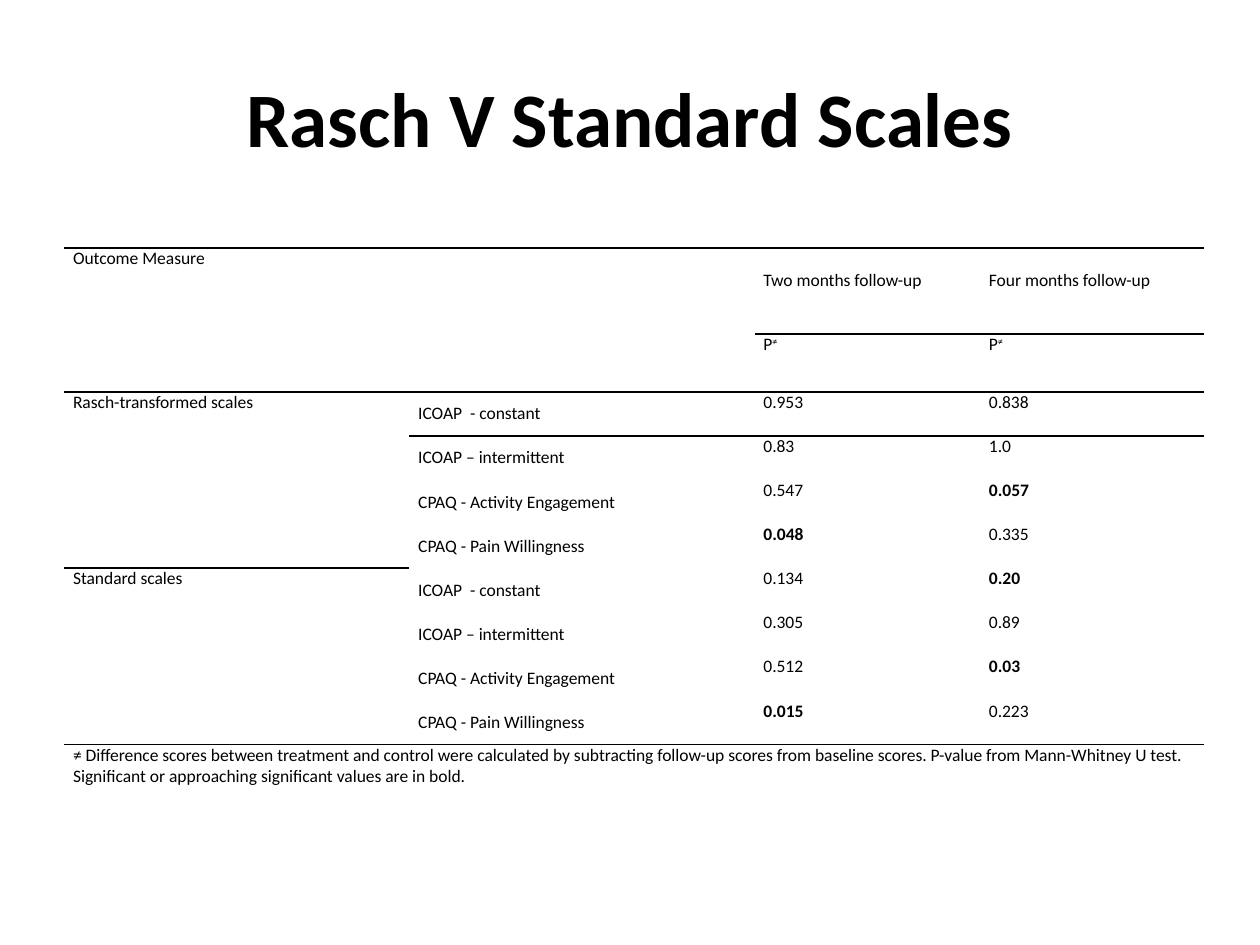
from lxml import etree
from pptx import Presentation
from pptx.dml.color import RGBColor as RGB
from pptx.enum.text import MSO_ANCHOR as ANCHOR, PP_ALIGN as ALIGN
from pptx.oxml.ns import qn
from pptx.util import Inches, Pt

COLORS = {"ink": "000000"}
FONT = "Calibri"
NO_STYLE = "{2D5ABB26-0587-4C30-8999-92F81FD0307C}"


def add_text(p, text, size=10, bold=False, raised=False):
    r = p.add_run()
    r.text = text
    r.font.name, r.font.size, r.font.bold = FONT, Pt(size), bold
    r.font.color.rgb = RGB.from_string(COLORS["ink"])
    if raised:
        r.font._element.set("baseline", "30000")


def add_border(cell, side):
    tcPr = cell._tc.get_or_add_tcPr()
    ln = etree.Element(qn("a:" + side), w=str(Pt(1)))
    fill = etree.SubElement(ln, qn("a:solidFill"))
    etree.SubElement(fill, qn("a:srgbClr"), val=COLORS["ink"])
    # Lines come before the fill, top before bottom
    tcPr.insert(len(tcPr.findall(qn("a:lnT"))), ln)


prs = Presentation()
prs.slide_width, prs.slide_height = Inches(10), Inches(7.5)
s = prs.slides.add_slide(prs.slide_layouts[5])

# Title
title = s.shapes.title
title.left, title.top = Inches(0.5), Inches(0.3)
title.width, title.height = Inches(9), Inches(1.25)
tf = title.text_frame
tf.vertical_anchor = ANCHOR.MIDDLE
p = tf.paragraphs[0]
p.alignment = ALIGN.CENTER
add_text(p, "Rasch V Standard Scales", size=44, bold=True)

# Table grid
widths = [2.74, 2.74, 1.79, 1.78]
heights = [0.27, 0.68, 0.46] + [0.35] * 8 + [0.45]
table = s.shapes.add_table(len(heights), len(widths), Inches(0.51), Inches(1.7),
                           Inches(sum(widths)), Inches(sum(heights))).table
table.first_row = table.horz_banding = False
table._tbl.tblPr.find(qn("a:tableStyleId")).text = NO_STYLE
for col, width in zip(table.columns, widths):
    col.width = Inches(width)
for row, height in zip(table.rows, heights):
    row.height = Inches(height)
for cell in table.iter_cells():
    cell.fill.background()
    cell.margin_left = cell.margin_right = Inches(0.07)
    cell.margin_top = cell.margin_bottom = 0
    cell.text_frame.paragraphs[0].font.size = Pt(10)

# Merged cells: first row and column, last row and column
for r1, c1, r2, c2 in [(0, 0, 0, 3), (1, 0, 2, 1), (3, 0, 6, 0),
                       (7, 0, 10, 0), (11, 0, 11, 3)]:
    table.cell(r1, c1).merge(table.cell(r2, c2))

# Header
add_text(table.cell(1, 0).text_frame.paragraphs[0], "Outcome Measure")
for c, period in enumerate(["Two months follow-up", "Four months follow-up"], 2):
    cell = table.cell(1, c)
    cell.vertical_anchor = ANCHOR.MIDDLE
    cell.margin_bottom = Inches(0.17)
    add_text(cell.text_frame.paragraphs[0], period)
    p = table.cell(2, c).text_frame.paragraphs[0]
    add_text(p, "P")
    add_text(p, "≠", raised=True)

# P-values by scale group
measures = ["ICOAP  - constant", "ICOAP – intermittent",
            "CPAQ - Activity Engagement", "CPAQ - Pain Willingness"]
groups = {
    "Rasch-transformed scales": [("0.953", "0.838"), ("0.83", "1.0"),
                                 ("0.547", "0.057"), ("0.048", "0.335")],
    "Standard scales": [("0.134", "0.20"), ("0.305", "0.89"),
                        ("0.512", "0.03"), ("0.015", "0.223")],
}
bold_values = {"0.057", "0.048", "0.20", "0.03", "0.015"}
for g, (group, results) in enumerate(groups.items()):
    top = 3 + g * len(measures)
    add_text(table.cell(top, 0).text_frame.paragraphs[0], group)
    for i, (measure, values) in enumerate(zip(measures, results), top):
        cell = table.cell(i, 1)
        cell.vertical_anchor = ANCHOR.MIDDLE
        add_text(cell.text_frame.paragraphs[0], measure)
        for c, value in enumerate(values, 2):
            add_text(table.cell(i, c).text_frame.paragraphs[0], value,
                     bold=value in bold_values)

# Footnote
add_text(table.cell(11, 0).text_frame.paragraphs[0],
         "≠ Difference scores between treatment and control were calculated by "
         "subtracting follow-up scores from baseline scores. P-value from "
         "Mann-Whitney U test. Significant or approaching significant values "
         "are in bold.")

# Rules below rows, from a first column to the right edge
for row, first in [(0, 0), (1, 2), (2, 0), (10, 0)]:
    for c in range(first, len(widths)):
        add_border(table.cell(row, c), "lnB")
        add_border(table.cell(row + 1, c), "lnT")

prs.save("out.pptx")
